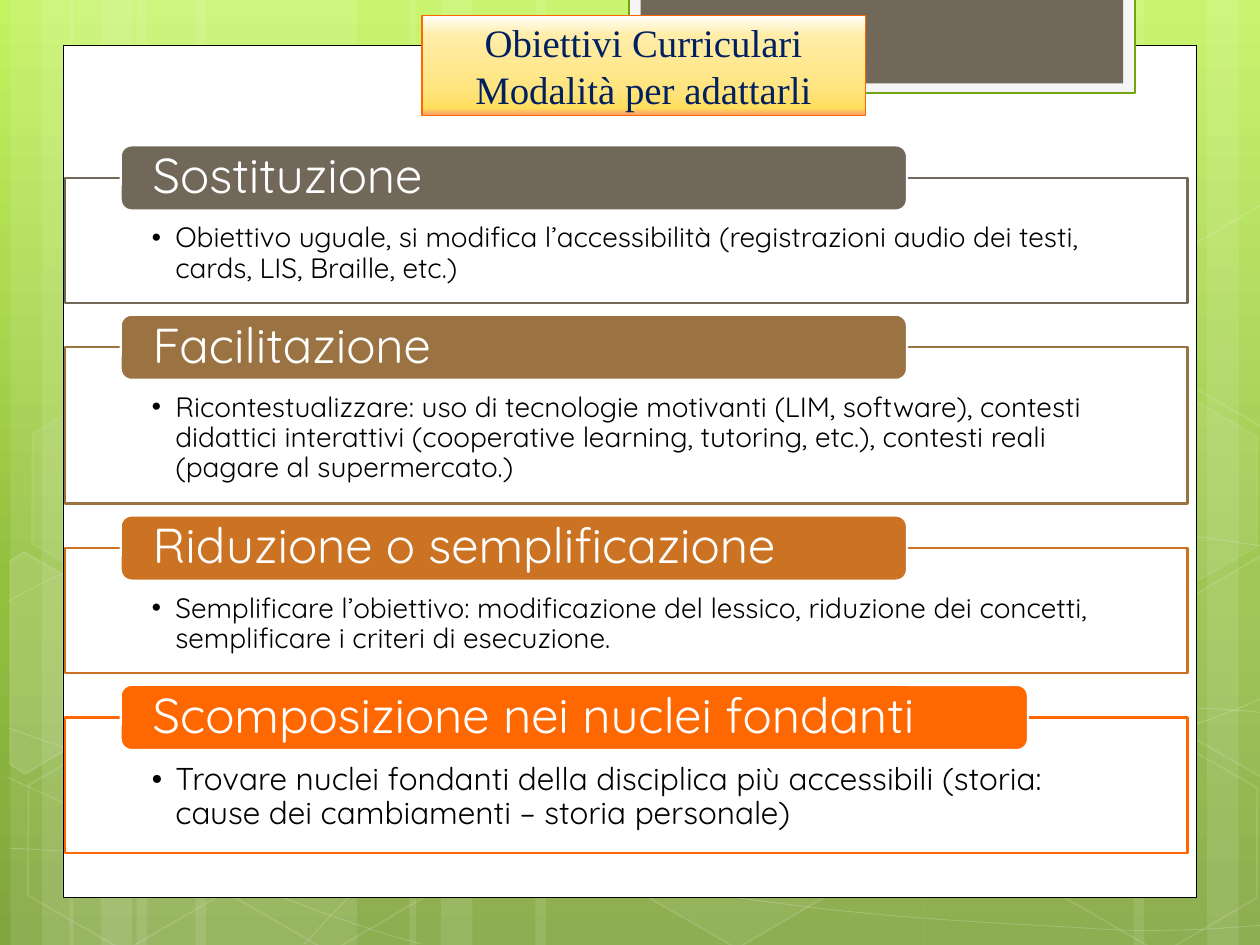
"""Build the slide on curricular objectives and the ways to adapt them."""
from dataclasses import dataclass
from math import cos, radians, sin

from lxml.etree import SubElement
from pptx import Presentation
from pptx.dml.color import RGBColor
from pptx.enum.shapes import MSO_SHAPE as Preset
from pptx.enum.text import MSO_ANCHOR as Anchor, PP_ALIGN as Align
from pptx.oxml.ns import qn
from pptx.util import Pt


@dataclass(frozen=True)
class Theme:
    """Colours, fonts and type sizes of the slide."""
    white: str = "FFFFFF"
    black: str = "000000"
    navy: str = "002060"
    tab: str = "71685A"
    tab_frame: str = "F5F5F5"
    tab_edge: str = "74A510"
    orange: str = "FF6700"
    levels: tuple = ("71685A", "9B7241", "CB7223", "FF6700")
    backdrop: tuple = ((0, "C3F35F"), (62, "93BF3F"), (100, "81A53E"))
    banner: tuple = ((0, "FFFFFF"), (19, "FFEDA9"), (74, "FFE47E"),
                     (87, "FFDF68"), (93, "FFDD5D"), (99, "FFA466"))
    sans: str = "Quicksand"
    serif: str = "Times New Roman"
    title_size: float = 22.2
    heading_size: float = 28


THEME = Theme()
TILT = 30

TITLE = ("Obiettivi Curriculari", "Modalità per adattarli")

STRATEGIES = (
    ("Sostituzione", 449.3, 71.4, 16,
     "Obiettivo uguale, si modifica l’accessibilità (registrazioni audio dei testi, "
     "cards, LIS, Braille, etc.)"),
    ("Facilitazione", 449.3, 89.3, 16,
     "Ricontestualizzare: uso di tecnologie motivanti (LIM, software), contesti "
     "didattici interattivi (cooperative learning, tutoring, etc.), contesti reali "
     "(pagare al supermercato.)"),
    ("Riduzione o semplificazione", 449.3, 71.4, 16,
     "Semplificare l’obiettivo: modificazione del lessico, riduzione dei concetti, "
     "semplificare i criteri di esecuzione."),
    ("Scomposizione nei nuclei fondanti", 518.4, 77.3, 18,
     "Trovare nuclei fondanti della disciplica più accessibili (storia: cause dei "
     "cambiamenti – storia personale)"),
)

STRIPE_CLUSTERS = ((6, 1, 126), (39.6, 1, 126), (725.8, -1, 126), (234, 1, 222))

WAVES = (
    ((5, 484.6), (43.9, 486.7), (82.8, 488.9), (136.8, 488.2), (190.8, 487.4),
     (257.8, 486), (329.8, 478.8), (401.8, 471.6), (504, 457.9), (570.2, 444.2),
     (635.8, 431), (703.4, 409), (725, 396.7)),
    ((5, 343.4), (25.9, 331.9), (46.8, 321.1), (87.1, 310.3), (128.2, 299.5),
     (186.5, 283.7), (249.8, 278.6), (313.9, 273.6), (391.7, 272.9), (470.9, 278.6),
     (550.1, 284.4), (681.8, 306.7), (725, 312.5)),
    ((4.3, 444.2), (91.4, 483.8), (177.8, 523.4), (240.5, 539.3)),
    ((5, 416.2), (27.4, 424.1), (50.4, 432), (92.2, 443.5), (133.9, 454.3),
     (196.6, 472.3), (257, 484.6), (316.8, 496.8), (392.4, 509.8), (452.2, 517),
     (511.9, 524.9), (576, 527.8), (614.2, 529.9), (651.6, 532.8), (661.7, 531.4),
     (680.4, 531.4), (699.1, 530.6), (712.1, 529.2), (725, 528.5)),
    ((174.2, 539.3), (187.2, 524.9), (200.2, 510.5), (217.4, 497.5), (234.7, 484.6),
     (259.2, 470.2), (279.4, 460.1), (299.5, 450), (311.8, 445.7), (338.4, 438.5),
     (364.3, 431.3), (412.6, 421.2), (437.8, 416.2), (463.7, 411.1), (467.3, 411.1),
     (489.6, 409.7), (511.9, 407.5), (547.2, 405.4), (571.7, 404.6), (596.9, 403.9),
     (637.9, 404.6), (637.9, 404.6), (654, 404.6), (670, 404.6), (686.2, 404.6),
     (699.1, 405.4), (711.4, 406.1), (717.8, 406.8), (724.3, 407.5), (722.2, 407.2),
     (724.3, 407.5)),
)

HEXAGONS = ((240.5, 25.9, 4, 8), (357.8, 424.1, 6, 12), (7.9, 425.5, 0, 12),
            (10.1, 224.6, 7, 8), (125.3, 426.2, 0, 12), (542.2, 326.2, 10, 12),
            (600.5, 427, 0, 12), (600.5, 226.1, 7, 8))

LEFT_CUT = ((5.8, 320.4), (13.7, 315.4), (69.1, 347), (68.4, 410.4),
            (14.4, 442.1), (5.8, 437))
RIGHT_CUT = ((666.7, 349.2), (720.7, 317.5), (726.5, 321.1), (726.5, 441.4),
             (721.4, 444.2), (666.7, 412.6))
UPPER_RIGHT_CUT = tuple((x, y - 200.5) for x, y in RIGHT_CUT)
CUT_HEXAGONS = ((LEFT_CUT, (25.9, 385.2), 10), (RIGHT_CUT, (709.2, 374.4), 4),
                (UPPER_RIGHT_CUT, (709.2, 173.9), 0))


def set_alpha(parent, percent):
    """Make the solid fill held directly by an element translucent."""
    colour = parent.find(qn("a:solidFill")).find(qn("a:srgbClr"))
    SubElement(colour, qn("a:alpha"), val=str(percent * 1000))


def style(shape, fill=None, fill_alpha=100, edge=None, edge_width=1, edge_alpha=100):
    """Give a shape its fill and outline, without a shadow."""
    shape.shadow.inherit = False
    if fill and fill_alpha:
        shape.fill.solid()
        shape.fill.fore_color.rgb = RGBColor.from_string(fill)
        if fill_alpha < 100:
            set_alpha(shape.element.spPr, fill_alpha)
    else:
        shape.fill.background()
    if edge:
        shape.line.color.rgb = RGBColor.from_string(edge)
        shape.line.width = Pt(edge_width)
        if edge_alpha < 100:
            set_alpha(shape.element.spPr.find(qn("a:ln")), edge_alpha)
    else:
        shape.line.fill.background()
    return shape


def paint_gradient(fill, element, stops):
    """Paint a vertical gradient with any number of stops."""
    fill.gradient()
    fill.gradient_angle = 270
    stop_list = element.find(".//" + qn("a:gsLst"))
    for stop in list(stop_list):
        stop_list.remove(stop)
    for position, colour in stops:
        stop = SubElement(stop_list, qn("a:gs"), pos=str(position * 1000))
        SubElement(stop, qn("a:srgbClr"), val=colour)


def add_block(slide, left, top, width, height, preset=Preset.RECTANGLE, **look):
    """Add a styled preset shape."""
    shape = slide.shapes.add_shape(preset, Pt(left), Pt(top), Pt(width), Pt(height))
    return style(shape, **look)


def add_outline(slide, points, close, **look):
    """Add a styled freeform through the points."""
    corners = [(Pt(x), Pt(y)) for x, y in points]
    builder = slide.shapes.build_freeform(*corners[0])
    builder.add_line_segments(corners[1:], close=close)
    return style(builder.convert_to_shape(), **look)


def add_wave(slide, knots, **look):
    """Add a freeform whose points after the first form cubic Bézier triples."""
    wave = add_outline(slide, knots, False, **look)
    lines = list(wave.element.iter(qn("a:lnTo")))
    track = lines[0].getparent()
    for first in range(0, len(lines), 3):
        curve = SubElement(track, qn("a:cubicBezTo"))
        for line in lines[first:first + 3]:
            curve.append(line[0])
            track.remove(line)


def turn_back(points, centre):
    """Turn points about a centre against the tilt of the hexagons."""
    cosine, sine = cos(radians(TILT)), sin(radians(TILT))
    offsets = [(x - centre[0], y - centre[1]) for x, y in points]
    return [(centre[0] + x * cosine + y * sine, centre[1] - x * sine + y * cosine)
            for x, y in offsets]


def write(shape, lines, font, size, colour, insets, anchor=Anchor.MIDDLE,
          align=Align.LEFT, spacing=None, bullet=False):
    """Write paragraphs of one type style into a shape."""
    frame = shape.text_frame
    frame.word_wrap = True
    frame.vertical_anchor = anchor
    frame.margin_left = frame.margin_right = Pt(insets[0])
    frame.margin_top, frame.margin_bottom = Pt(insets[1]), Pt(insets[2])
    frame.text = "\n".join(lines)
    for paragraph in frame.paragraphs:
        paragraph.alignment = align
        paragraph.line_spacing = spacing
        if bullet:
            properties = paragraph._p.get_or_add_pPr()
            properties.set("marL", str(Pt(13.5)))
            properties.set("indent", str(-Pt(13.5)))
            SubElement(properties, qn("a:buFont"), typeface=font)
            SubElement(properties, qn("a:buChar"), char="•")
        paragraph.font.name = font
        paragraph.font.size = Pt(size)
        paragraph.font.color.rgb = RGBColor.from_string(colour)


def add_backdrop(slide):
    """Draw the green background with its stripes, waves and hexagons."""
    paint_gradient(slide.background.fill, slide.element, THEME.backdrop)
    white = THEME.white
    for origin, direction, widest in STRIPE_CLUSTERS:
        for offset, width in ((72, widest), (0, 36), (18, 60)):
            left = origin + offset if direction > 0 else origin - offset - width
            add_block(slide, left, 0, width, 540, fill=white, fill_alpha=10)
    for knots in WAVES:
        add_wave(slide, knots, edge=white, edge_width=0.5, edge_alpha=20)
    for left, top, fill_alpha, edge_alpha in HEXAGONS:
        hexagon = add_block(slide, left, top, 126, 109.4, Preset.HEXAGON, fill=white,
                            fill_alpha=fill_alpha, edge=white, edge_alpha=edge_alpha)
        hexagon.adjustments[0] = 0.285
        hexagon.rotation = TILT
    for corners, centre, fill_alpha in CUT_HEXAGONS:
        cut = add_outline(slide, turn_back(corners, centre), True, fill=white,
                          fill_alpha=fill_alpha, edge=white, edge_alpha=12)
        cut.rotation = TILT


def add_title(slide):
    """Draw the white page, the corner tab and the title banner."""
    add_block(slide, 36, 25.9, 648, 487, fill=THEME.white, edge=THEME.black, edge_width=0.5)
    add_block(slide, 359.3, -1.4, 289.4, 54.7, fill=THEME.tab_frame,
              edge=THEME.tab_edge, edge_width=1.25)
    add_block(slide, 366.1, -1.4, 275.8, 49, fill=THEME.tab)
    banner = add_block(slide, 241.1, 9, 253.4, 56.9, edge=THEME.orange, edge_width=0.75)
    paint_gradient(banner.fill, banner.element, THEME.banner)
    write(banner, TITLE, THEME.serif, THEME.title_size, THEME.navy, (0, 3.6, 3.6),
          align=Align.CENTER)


def add_strategies(slide):
    """Stack the strategies, each a framed text under a coloured heading."""
    top = 101.7
    for colour, strategy in zip(THEME.levels, STRATEGIES):
        name, heading_width, height, size, description = strategy
        body = add_block(slide, 37.1, top, 641.5, height, fill=THEME.white, fill_alpha=90,
                         edge=colour, edge_width=1.25)
        write(body, [description], THEME.sans, size, THEME.black, (49.6, 26.2, 8.6),
              anchor=Anchor.TOP, spacing=0.9, bullet=True)
        heading = add_block(slide, 69, top - 18.6, heading_width, 37.2,
                            Preset.ROUNDED_RECTANGLE, fill=colour,
                            edge=THEME.white, edge_width=1.25)
        write(heading, [name], THEME.sans, THEME.heading_size, THEME.white, (16.5, 0, 0),
              spacing=0.9)
        top += height + 25.4


def main():
    """Assemble and save the slide."""
    deck = Presentation()
    deck.slide_width, deck.slide_height = Pt(720), Pt(540)
    slide = deck.slides.add_slide(deck.slide_layouts[6])
    add_backdrop(slide)
    add_title(slide)
    add_strategies(slide)
    deck.save("out.pptx")


if __name__ == "__main__":
    main()
